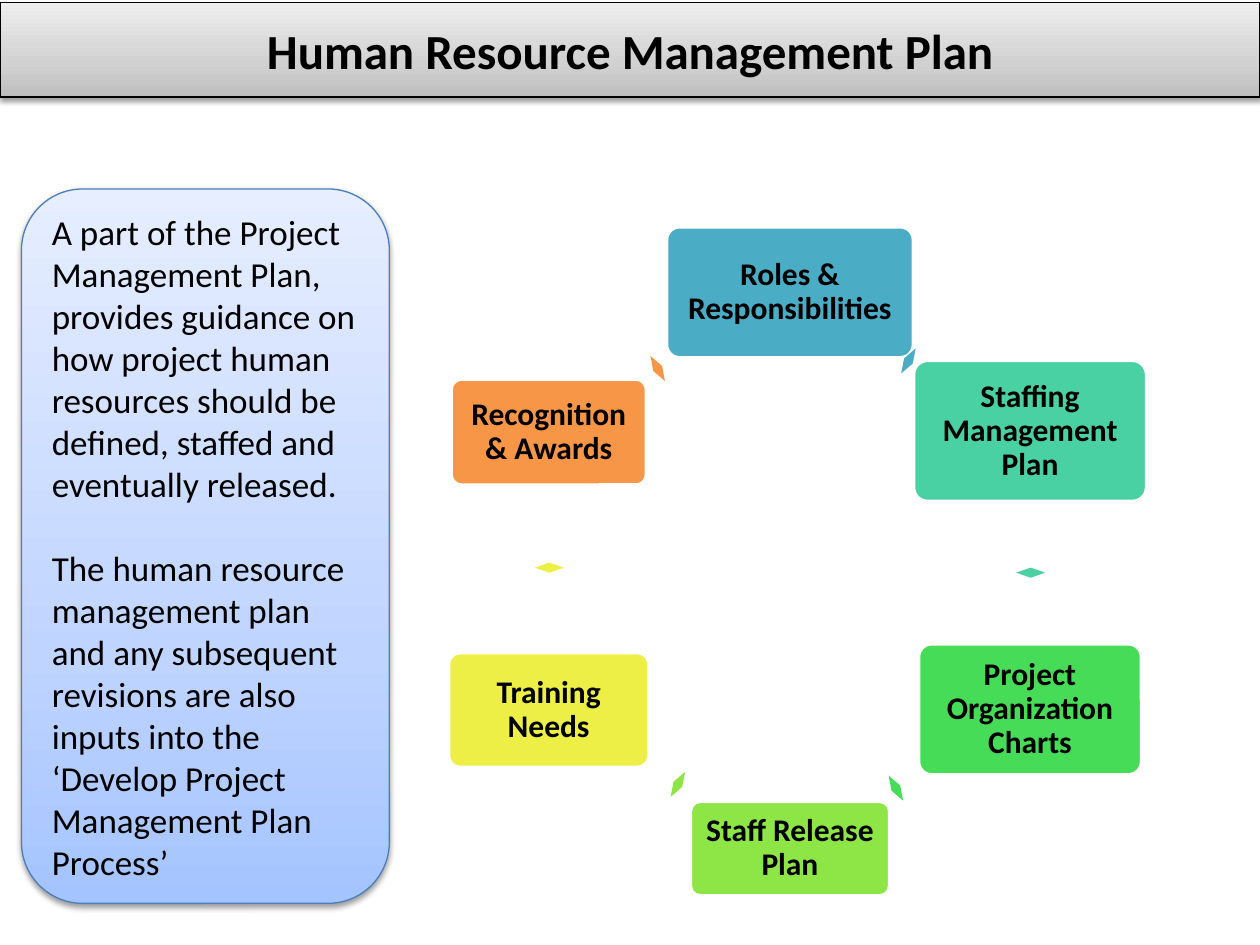
import copy

import pptx
import pptx.dml.color
import pptx.enum.shapes
import pptx.enum.text
import pptx.oxml
import pptx.oxml.ns
import pptx.util

Inches = pptx.util.Inches
Pt = pptx.util.Pt
RGB = pptx.dml.color.RGBColor.from_string
SHAPE = pptx.enum.shapes.MSO_SHAPE
ALIGN = pptx.enum.text.PP_ALIGN
NAMESPACE = pptx.oxml.ns.nsdecls("a")

COLORS = {
    "text": "000000",
    "white": "FFFFFF",
    "panel_line": "4B7EBC",
    "teal": "4BACC6",
    "mint": "49D1A3",
    "green": "47DC57",
    "lime": "8DE646",
    "yellow": "EEEF46",
    "orange": "F79646",
}
BANNER_GRADIENT = ["BDBDBD", "D1D1D1", "EEEEEE"]
PANEL_GRADIENT = ["A4C4FF", "BFD4FF", "E6EEFF"]
STOP_POSITIONS = [0, 0.35, 1]


def write_text(shape, paragraphs, paragraph_format, font_format):
    frame = shape.text_frame
    frame.text = "\n".join(paragraphs)
    frame.word_wrap = True
    frame.auto_size = pptx.enum.text.MSO_AUTO_SIZE.NONE
    frame.vertical_anchor = pptx.enum.text.MSO_ANCHOR.MIDDLE
    for paragraph in frame.paragraphs:
        for name, value in paragraph_format.items():
            setattr(paragraph, name, value)
        font = paragraph.runs[0].font
        for name, value in font_format.items():
            setattr(font, name, value)
        font.color.rgb = RGB(COLORS["text"])


def style_raised(shape, gradient, line_color):
    shape.fill.gradient()
    shape.fill.gradient_angle = 90
    stop_list = shape.element.spPr.find(".//" + pptx.oxml.ns.qn("a:gsLst"))
    stop_list.append(copy.deepcopy(stop_list[0]))
    for stop, position, color in zip(shape.fill.gradient_stops, STOP_POSITIONS, gradient):
        stop.position = position
        stop.color.rgb = RGB(color)
    shape.line.color.rgb = RGB(line_color)
    shape.line.width = Pt(0.75)
    shape.shadow.inherit = False
    effects = shape.element.spPr.find(pptx.oxml.ns.qn("a:effectLst"))
    effects.append(pptx.oxml.parse_xml(
        f'<a:outerShdw {NAMESPACE} blurRad="{Pt(3.1)}" dist="{Pt(1.6)}" dir="5400000" rotWithShape="0">'
        f'<a:srgbClr val="{COLORS["text"]}"><a:alpha val="38000"/></a:srgbClr></a:outerShdw>'
    ))


presentation = pptx.Presentation()
presentation.slide_width = Inches(10)
presentation.slide_height = Inches(7.5)
slide = presentation.slides.add_slide(presentation.slide_layouts[5])

title = slide.shapes.title
title_box = {"left": 0, "top": 0.02, "width": 10, "height": 0.75}
for name, value in title_box.items():
    setattr(title, name, Inches(value))
title.element.spPr.append(pptx.oxml.parse_xml(
    f'<a:prstGeom {NAMESPACE} prst="roundRect"><a:avLst/></a:prstGeom>'
))
style_raised(title, BANNER_GRADIENT, COLORS["text"])
write_text(
    title,
    ["Human Resource Management Plan"],
    {"alignment": ALIGN.CENTER},
    {"name": "Calibri", "size": Pt(28), "bold": True},
)

panel = slide.shapes.add_shape(
    SHAPE.ROUNDED_RECTANGLE, Inches(0.17), Inches(1.5), Inches(2.92), Inches(5.67)
)
style_raised(panel, PANEL_GRADIENT, COLORS["panel_line"])
write_text(
    panel,
    [
        "A part of the Project Management Plan, provides guidance on how project human "
        "resources should be defined, staffed and eventually released.",
        "The human resource management plan and any subsequent revisions are also inputs "
        "into the ‘Develop Project Management Plan Process’",
    ],
    {"alignment": ALIGN.LEFT},
    {"name": "Calibri", "size": Pt(20)},
)
panel.text_frame.paragraphs[1].space_before = Pt(24)

cycle = [
    ("Roles & Responsibilities", "teal", (5.29, 1.8, 1.96, 1.04), (7.17, 2.75)),
    ("Staffing Management Plan", "mint", (7.25, 2.86, 1.85, 1.12), (8.14, 4.43)),
    ("Project Organization Charts", "green", (7.29, 5.11, 1.77, 1.04), (7.07, 6.14)),
    ("Staff Release Plan", "lime", (5.48, 6.36, 1.58, 0.75), (5.34, 6.11)),
    ("Training Needs", "yellow", (3.56, 5.18, 1.59, 0.91), (4.32, 4.39)),
    ("Recognition & Awards", "orange", (3.58, 3.01, 1.55, 0.84), (5.18, 2.81)),
]
for index, (label, color, box, arrow_corner) in enumerate(cycle):
    node = slide.shapes.add_shape(SHAPE.ROUNDED_RECTANGLE, *map(Inches, box))
    node.adjustments[0] = 0.1
    node.line.color.rgb = RGB(COLORS["white"])
    node.line.width = Pt(2)
    for side in ("left", "top", "right", "bottom"):
        setattr(node.text_frame, f"margin_{side}", Inches(0.07))
    write_text(
        node,
        [label],
        {"alignment": ALIGN.CENTER, "line_spacing": 0.9},
        {"name": "Calibri", "size": Pt(18), "bold": True},
    )

    arrow = slide.shapes.add_shape(
        SHAPE.LEFT_RIGHT_ARROW, *map(Inches, arrow_corner), Inches(0.08), Inches(0.23)
    )
    arrow.adjustments[0] = 0.6
    arrow.adjustments[1] = 0.5
    arrow.rotation = 30 + 60 * index
    arrow.line.fill.background()

    for shape in (node, arrow):
        shape.fill.solid()
        shape.fill.fore_color.rgb = RGB(COLORS[color])
        shape.shadow.inherit = False

presentation.save("out.pptx")
